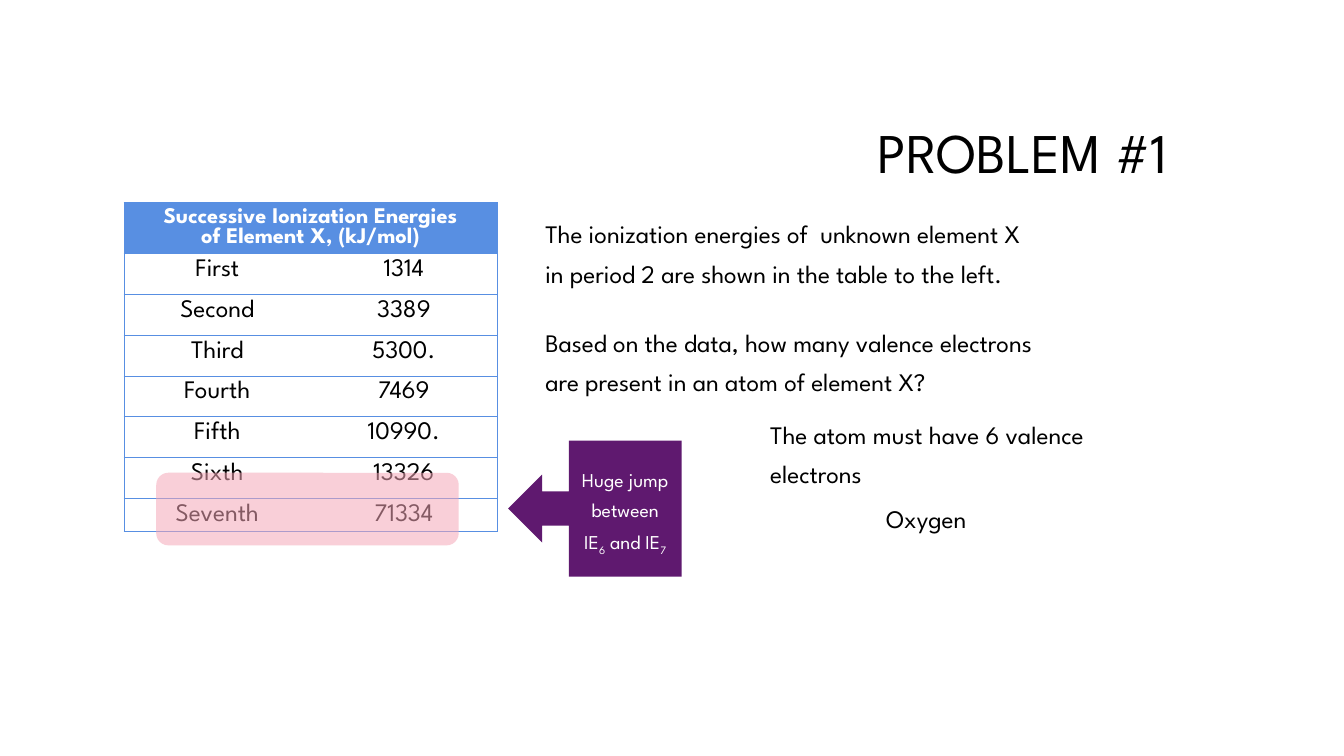
from pptx import Presentation, util as u
from pptx.dml.color import RGBColor
from pptx.enum import shapes, text
from pptx.oxml import parse_xml
from pptx.oxml.ns import nsdecls
from lxml import etree

BLACK = RGBColor(0, 0, 0)
WHITE = RGBColor(255, 255, 255)
BLUE = RGBColor(0x58, 0x8F, 0xE2)
PINK = RGBColor(0xF5, 0xA7, 0xB8)
PLUM = RGBColor(0x5F, 0x19, 0x6F)
FACE = "League Spartan"
LEFT, MID, RIGHT = text.PP_ALIGN.LEFT, text.PP_ALIGN.CENTER, text.PP_ALIGN.RIGHT

head = ["Successive Ionization Energies", "of Element X, (kJ/mol)"]
rows = [
    ("First", "1314"), ("Second", "3389"), ("Third", "5300."),
    ("Fourth", "7469"), ("Fifth", "10990."), ("Sixth", "13326"),
    ("Seventh", "71334"),
]
body = {"size": 18, "color": BLACK, "align": LEFT, "line": 1.3}
title = {"size": 40, "color": BLACK, "align": RIGHT, "line": 0.9,
         "anchor": text.MSO_ANCHOR.MIDDLE}
notes = [
    ((2.26, 0.84, 9.42, 1.41), ["PROBLEM #1"], title),
    ((5.31, 2.03, 6.2, 1.92), [
        "The ionization energies of  unknown element X",
        "in period 2 are shown in the table to the left.",
        "Based on the data, how many valence electrons",
        "are present in an atom of element X?"], {**body, "gaps": {2: 21.6}}),
    ((7.54, 4.02, 3.7, 0.71), ["The atom must have 6 valence electrons"], body),
    ((8.69, 4.85, 1.17, 0.4), ["Oxygen"], body),
]
jump = [("Huge jump between IE", False), ("6", True), (" and IE", False), ("7", True)]
cell_look = {"size": 18, "color": BLACK, "align": MID, "line": 1.0}
head_look = {**cell_look, "size": 16, "color": WHITE, "bold": True}
jump_look = {"size": 14, "color": WHITE, "align": MID, "line": 1.3}


def place(box):
    return [u.Inches(n) for n in box]


def write(frame, lines, look):
    frame.word_wrap = True
    if "anchor" in look:
        frame.vertical_anchor = look["anchor"]
    for i, line in enumerate(lines):
        para = frame.paragraphs[0] if i == 0 else frame.add_paragraph()
        space = u.Pt(look.get("gaps", {}).get(i, 0))
        form = {"alignment": look["align"], "line_spacing": look["line"],
                "space_before": space}
        for key, val in form.items():
            setattr(para, key, val)
        parts = [(line, False)] if isinstance(line, str) else line
        for words, low in parts:
            run = para.add_run()
            run.text = words
            font = {"name": FACE, "size": u.Pt(look["size"]), "bold": look.get("bold", False)}
            for key, val in font.items():
                setattr(run.font, key, val)
            run.font.color.rgb = look["color"]
            if low:
                run.font._element.set("baseline", "-25000")


def edge(cell, sides):
    props = cell._tc.get_or_add_tcPr()
    for side in "LRTB":
        fill = f'<a:solidFill><a:srgbClr val="{BLUE}"/></a:solidFill>' if side in sides else "<a:noFill/>"
        props.append(parse_xml(f'<a:ln{side} {nsdecls("a")} w="9525">{fill}</a:ln{side}>'))


def draw(slide, kind, box, color):
    shape = slide.shapes.add_shape(kind, *place(box))
    shape.shadow.inherit = False
    shape.fill.solid()
    shape.fill.fore_color.rgb = color
    shape.line.fill.background()
    return shape


def grid(slide):
    frame = slide.shapes.add_table(len(rows) + 1, 2, *place((1.23, 2.01, 3.7, 3.26)))
    table = frame.table
    for i, row in enumerate(table.rows):
        row.height = u.Inches(0.5 if i == 0 else 0.33 if i == len(rows) else 0.405)
    for r in range(len(rows) + 1):
        for c in range(2):
            cell = table.cell(r, c)
            edge(cell, "LRTB" if r == 0 else "LTB" if c == 0 else "RTB")
            if r == 0:
                cell.fill.solid()
                cell.fill.fore_color.rgb = BLUE
            else:
                cell.fill.background()
                write(cell.text_frame, [rows[r - 1][c]], cell_look)
    top = table.cell(0, 0)
    top.merge(table.cell(0, 1))
    write(top.text_frame, head, head_look)


def main():
    deck = Presentation()
    deck.slide_width, deck.slide_height = u.Inches(13.33), u.Inches(7.5)
    slide = deck.slides.add_slide(deck.slide_layouts[6])
    grid(slide)
    for box, lines, look in notes:
        write(slide.shapes.add_textbox(*place(box)).text_frame, lines, look)
    kinds = shapes.MSO_SHAPE
    band = draw(slide, kinds.ROUNDED_RECTANGLE, (1.55, 4.69, 3, 0.72), PINK)
    tint = band.fill._xPr.find(".//{*}srgbClr")
    etree.SubElement(tint, tint.tag.replace("srgbClr", "alpha"), val="54000")
    call = draw(slide, kinds.LEFT_ARROW_CALLOUT, (5.04, 4.37, 1.72, 1.35), PLUM)
    write(call.text_frame, [jump], {**jump_look, "anchor": text.MSO_ANCHOR.MIDDLE})
    deck.save("out.pptx")


if __name__ == "__main__":
    main()
